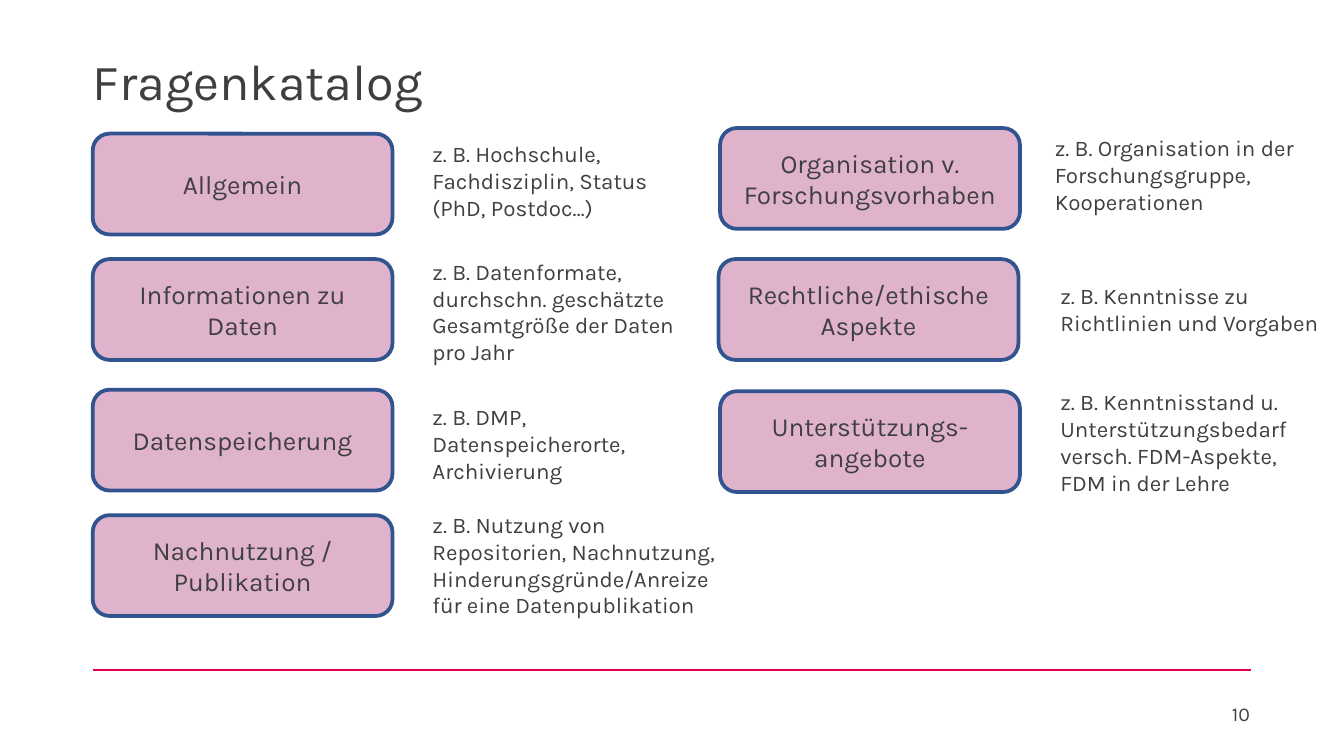
from pptx import Presentation
from pptx.dml.color import RGBColor
from pptx.enum.shapes import MSO_CONNECTOR, MSO_SHAPE
from pptx.enum.text import MSO_ANCHOR, PP_ALIGN
from pptx.oxml.ns import qn
from pptx.util import Pt
from lxml import etree

LEFT, MID, RIGHT = PP_ALIGN.LEFT, PP_ALIGN.CENTER, PP_ALIGN.RIGHT
TOP, CENTER = MSO_ANCHOR.TOP, MSO_ANCHOR.MIDDLE
ROUND, LINE = MSO_SHAPE.ROUNDED_RECTANGLE, MSO_CONNECTOR.STRAIGHT


class Theme:
    font = "Karla"
    ink = RGBColor.from_string("3F3F3F")
    fill = RGBColor.from_string("DFB3CC")
    edge = RGBColor.from_string("31538F")
    rule = RGBColor.from_string("E5004E")
    title, topic, note, page = Pt(27), Pt(14), Pt(12), Pt(10.5)


def write(shape, text, size, align=LEFT, anchor=TOP, pad=(7.2, 3.6), space=None):
    frame = shape.text_frame
    frame.text = text
    form = {
        "word_wrap": True, "vertical_anchor": anchor,
        "margin_left": Pt(pad[0]), "margin_right": Pt(pad[0]),
        "margin_top": Pt(pad[1]), "margin_bottom": Pt(pad[1]),
    }
    for key, value in form.items():
        setattr(frame, key, value)
    for para in frame.paragraphs:
        para.alignment = align
        para.line_spacing = space
        for run in para.runs:
            run.font.name, run.font.size = Theme.font, size
            run.font.color.rgb = Theme.ink


def add_text(left, top, width, height, text, size, **form):
    box = slide.shapes.add_textbox(Pt(left), Pt(top), Pt(width), Pt(height))
    write(box, text, size, **form)


deck = Presentation()
deck.slide_width, deck.slide_height = Pt(720), Pt(405)
slide = deck.slides.add_slide(deck.slide_layouts[6])

# Title
EDGE, SPAN = 49.7, 620.6
add_text(EDGE, 27.4, SPAN, 67.7, "Fragenkatalog", Theme.title,
         pad=(0, 2.9), space=0.9)

# Topics: box left and top, topic, note left, top and width, note
WIDE, HIGH = 160.6, 54
NOTE, LINE_HIGH = 224.6, 14.4
topics = [
    (EDGE, 71.6, "Allgemein", NOTE, 71.6, 160.6,
     "z. B. Hochschule, Fachdisziplin, Status (PhD, Postdoc…)", 3),
    (EDGE, 138.8, "Informationen zu Daten", NOTE, 134.6, 152,
     "z. B. Datenformate, durchschn. geschätzte Gesamtgröße der Daten pro Jahr", 4),
    (EDGE, 208.8, "Datenspeicherung", NOTE, 212.4, 152,
     "z. B. DMP, Datenspeicherorte, Archivierung", 3),
    (EDGE, 276, "Nachnutzung / Publikation", NOTE, 270.2, 170,
     "z. B. Nutzung von Repositorien, Nachnutzung, "
     "Hinderungsgründe/Anreize für eine Datenpublikation", 4),
    (385.8, 68.6, "Organisation v. Forschungsvorhaben", 558, 68.6, 160.6,
     "z. B. Organisation in der Forschungsgruppe,\nKooperationen", 3),
    (385, 138.8, "Rechtliche/ethische Aspekte", 561, 147.5, 160.6,
     "z. B. Kenntnisse zu Richtlinien und Vorgaben", 2),
    (385.8, 209.6, "Unterstützungs-\nangebote", 561, 204.6, 152,
     "z. B. Kenntnisstand u. Unterstützungsbedarf versch. FDM-Aspekte, "
     "FDM in der Lehre", 4),
]
for left, top, topic, x, y, width, note, rows in topics:
    box = slide.shapes.add_shape(ROUND, Pt(left), Pt(top), Pt(WIDE), Pt(HIGH))
    box.shadow.inherit = False
    box.fill.solid()
    box.fill.fore_color.rgb = Theme.fill
    box.line.color.rgb, box.line.width = Theme.edge, Pt(2)
    write(box, topic, Theme.topic, align=MID, anchor=CENTER)
    add_text(x, y, width, 7.2 + rows * LINE_HIGH, note, Theme.note)

# Footer rule and page number
rule = slide.shapes.add_connector(LINE, Pt(EDGE), Pt(359), Pt(EDGE + SPAN), Pt(359))
rule.line.color.rgb, rule.line.width = Theme.rule, Pt(1)
etree.SubElement(rule.element.spPr, qn("a:effectLst"))
add_text(626.4, 373, 48.2, 21.6, "10", Theme.page, align=RIGHT, pad=(5, 2.9))

deck.save("out.pptx")
